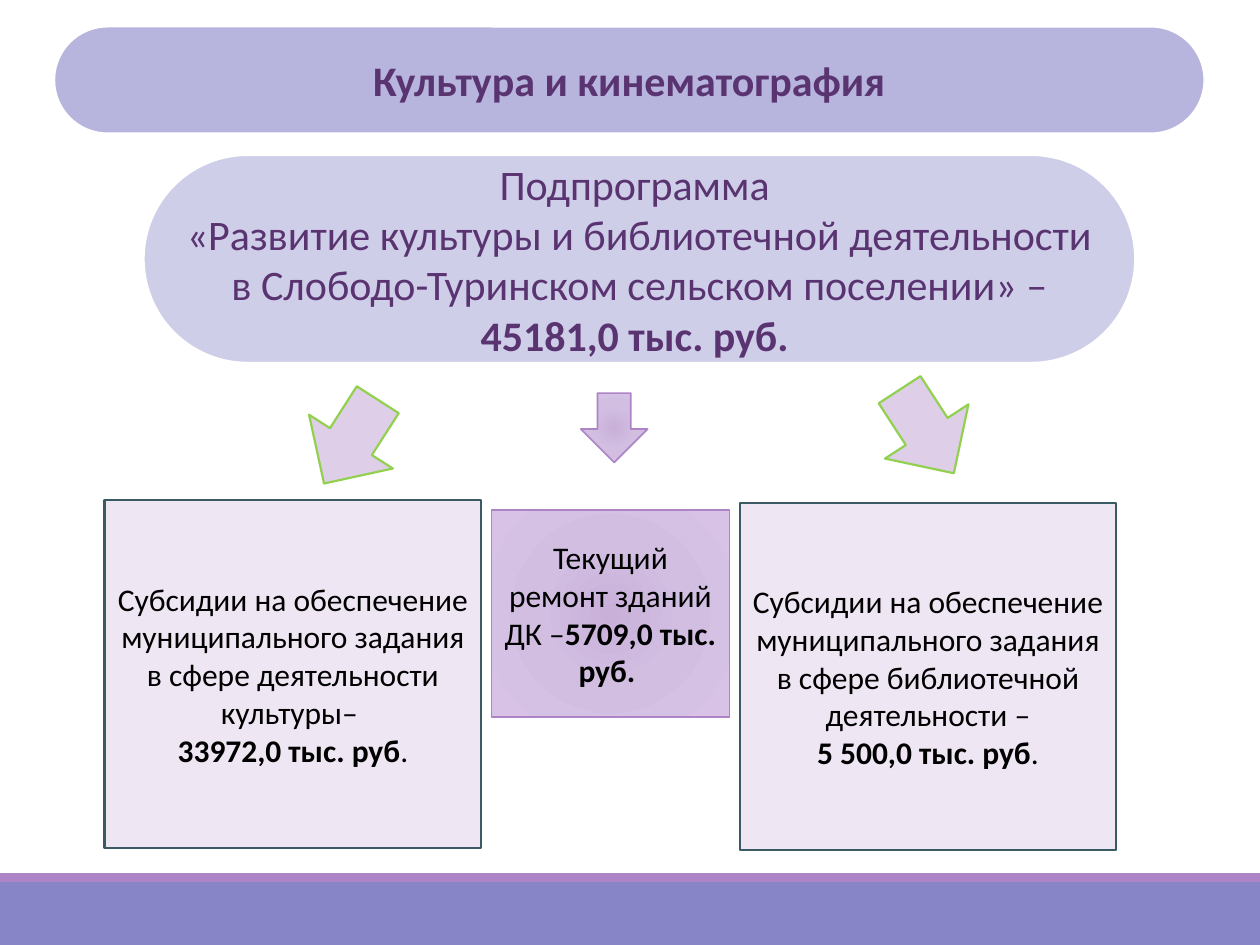
from lxml import etree
from pptx import Presentation
from pptx.dml.color import RGBColor
from pptx.enum.shapes import MSO_SHAPE
from pptx.enum.text import MSO_ANCHOR, PP_ALIGN
from pptx.oxml.ns import qn
from pptx.util import Inches, Pt

GLOW = [(0, "C8B0D9"), (45, "D2BEE1"), (100, "D8C3E7")]
PURPLE = "5A3471"
LILAC = "AD84C6"


def color(value):
    return RGBColor.from_string(value)


def fill_radial(shape, stops):
    shape.fill.gradient()
    gradient = shape._element.spPr.find(qn("a:gradFill"))
    for child in list(gradient):
        gradient.remove(child)
    stop_list = etree.SubElement(gradient, qn("a:gsLst"))
    for position, value in stops:
        stop = etree.SubElement(stop_list, qn("a:gs"), pos=str(position * 1000))
        etree.SubElement(stop, qn("a:srgbClr"), val=value)
    shade = etree.SubElement(gradient, qn("a:path"), path="circle")
    edges = {edge: "100000" for edge in "ltrb"}
    etree.SubElement(shade, qn("a:fillToRect"), **edges)


def add_box(slide, kind, box, fill, line=None, width=1.25, rotation=0):
    shape = slide.shapes.add_shape(kind, *[Inches(length) for length in box])
    shape.shadow.inherit = False
    shape.rotation = rotation
    if isinstance(fill, list):
        fill_radial(shape, fill)
    else:
        shape.fill.solid()
        shape.fill.fore_color.rgb = color(fill)
    if line:
        shape.line.color.rgb = color(line)
        shape.line.width = Pt(width)
    else:
        shape.line.fill.background()
    return shape


def add_run(paragraph, text, size=18, font_color="000000", bold=False):
    run = paragraph.add_run()
    run.text = text
    run.font.name = "Calibri"
    run.font.size = Pt(size)
    run.font.bold = bold
    run.font.color.rgb = color(font_color)


def write_text(shape, paragraphs, **text_format):
    frame = shape.text_frame
    frame.word_wrap = True
    frame.vertical_anchor = MSO_ANCHOR.MIDDLE
    for index, runs in enumerate(paragraphs):
        paragraph = frame.add_paragraph() if index else frame.paragraphs[0]
        paragraph.alignment = PP_ALIGN.CENTER
        for text, bold in runs:
            add_run(paragraph, text, bold=bold, **text_format)


def add_footer(slide, box):
    left, top, width, height = box
    stripe = 0.07
    add_box(slide, MSO_SHAPE.RECTANGLE, (left, top + stripe, width, height - stripe), "8784C7")
    add_box(slide, MSO_SHAPE.RECTANGLE, (left, top, width, stripe), LILAC)


def add_banner(slide, box, fill, paragraphs):
    shape = add_box(slide, MSO_SHAPE.ROUNDED_RECTANGLE, box, fill, "FFFFFF")
    shape.adjustments[0] = 0.5
    write_text(shape, paragraphs, size=24, font_color=PURPLE)


def add_subsidy(slide, box, purpose, amount):
    shape = add_box(slide, MSO_SHAPE.RECTANGLE, box, "EFE6F4", "3A5B63")
    write_text(shape, [[(purpose, False)], [(amount, True), (".", False)]])


def add_repair(slide, box):
    shape = add_box(slide, MSO_SHAPE.RECTANGLE, box, GLOW, LILAC, 1)
    write_text(shape, [[("Текущий ремонт зданий ДК –", False), ("5709,0 тыс. руб. ", True)]])


def add_arrow(slide, box, fill, line, width=1.25, rotation=0):
    add_box(slide, MSO_SHAPE.DOWN_ARROW, box, fill, line, width, rotation)


def main():
    presentation = Presentation()
    presentation.slide_width = Inches(10)
    presentation.slide_height = Inches(7.5)
    slide = presentation.slides.add_slide(presentation.slide_layouts[6])

    add_footer(slide, (0, 6.93, 10, 0.57))
    add_banner(slide, (0.43, 0.21, 9.13, 0.85), "B7B5DD", [[("Культура и кинематография", True)]])
    add_banner(slide, (1.14, 1.23, 7.87, 1.65), "CFCEE9", [
        [("Подпрограмма ", False)],
        [("«Развитие культуры и библиотечной деятельности "
          "в Слободо-Туринском сельском поселении» – ", False),
         ("45181,0 тыс. руб. ", True)],
    ])
    for left, top, rotation in [(2.39, 3.11, 32.7), (6.96, 3.03, 327)]:
        add_arrow(slide, (left, top, 0.79, 0.79), "DECEE8", "92D050", rotation=rotation)

    task = "Субсидии на обеспечение муниципального задания в сфере "
    for left, top, area, amount in [
        (0.83, 3.97, "деятельности культуры– ", "33972,0 тыс. руб"),
        (5.87, 3.99, "библиотечной деятельности –", "5 500,0 тыс. руб"),
    ]:
        add_subsidy(slide, (left, top, 2.99, 2.76), task + area, amount)
    add_repair(slide, (3.9, 4.05, 1.89, 1.64))
    add_arrow(slide, (4.61, 3.12, 0.53, 0.55), GLOW, LILAC, 1)

    presentation.save("out.pptx")


if __name__ == "__main__":
    main()
